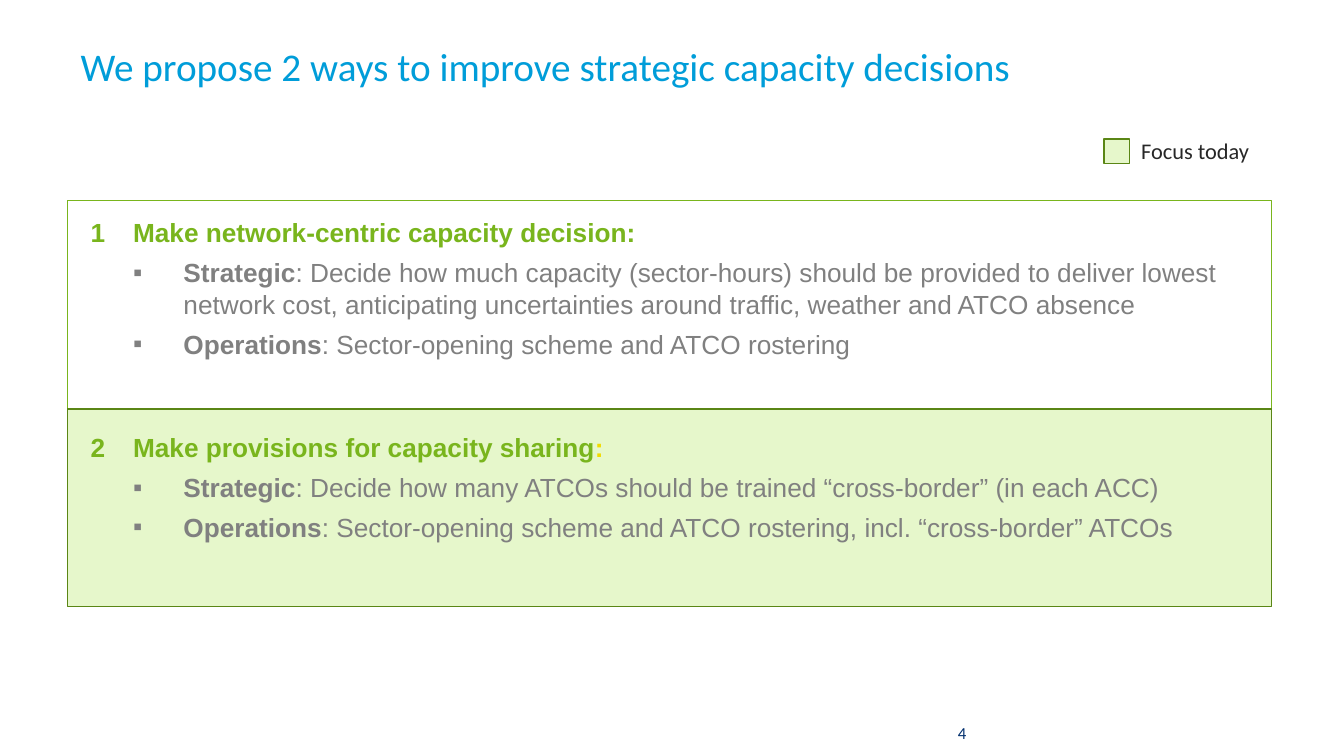
from pptx import Presentation
from pptx import util as u
from pptx.dml.color import RGBColor
from pptx.enum import shapes, text
from pptx.oxml.ns import qn
from lxml import etree

COLORS = {"white": "FFFFFF", "green": "79B51D", "dark_green": "5A8615",
          "pale_green": "E6F7CB", "grey": "808080", "yellow": "F2DB00",
          "blue": "009DD9", "navy": "002F6E", "ink": "272727"}
HEAD = {"name": "Arial", "size": u.Pt(18.7), "bold": True, "color": "green"}
COLON = {**HEAD, "color": "yellow"}
LABEL = {**HEAD, "color": "grey"}
BODY = {**LABEL, "bold": False}
TITLE = {"name": "Calibri", "size": u.Pt(28), "color": "blue"}
LEGEND = {"name": "Calibri", "size": u.Pt(16), "color": "ink"}
PAGE = {"name": "Calibri", "size": u.Pt(12), "color": "navy"}


class Deck:
    """Holds the slide; every box is (left, top, width, height) in % of the slide."""

    def __init__(self, width, height):
        self.prs = Presentation()
        self.prs.slide_width, self.prs.slide_height = u.Inches(width), u.Inches(height)
        self.s = self.prs.slides.add_slide(self.prs.slide_layouts.get_by_name("Two Content"))

    def box(self, left, top, width, height):
        w, h = self.prs.slide_width, self.prs.slide_height
        return [int(share * side / 100) for share, side in
                zip((left, top, width, height), (w, h, w, h))]

    def frame(self, sp, margins=(0, 0), wrap=True, anchor=text.MSO_ANCHOR.TOP):
        tf = sp.text_frame
        side, end = (u.Inches(m) for m in margins)
        values = {"margin_left": side, "margin_right": side, "margin_top": end,
                  "margin_bottom": end, "word_wrap": wrap, "vertical_anchor": anchor,
                  "auto_size": text.MSO_AUTO_SIZE.NONE}
        for name, value in values.items():
            setattr(tf, name, value)
        return tf

    def add_runs(self, p, runs, align=text.PP_ALIGN.LEFT):
        p.alignment = align
        for words, fmt in runs:
            r = p.add_run()
            r.text = words
            for name, value in fmt.items():
                if name == "color":
                    r.font.color.rgb = RGBColor.from_string(COLORS[value])
                else:
                    setattr(r.font, name, value)

    def place(self, sp, box):
        sp.left, sp.top, sp.width, sp.height = self.box(*box)
        self.s.shapes.element.append(sp.element)  # bring to the front

    def title(self, box, words):
        sp = self.s.shapes.title
        self.place(sp, box)
        self.add_runs(self.frame(sp, (0.13, 0.07)).paragraphs[0], [(words, TITLE)])

    def rect(self, box, fill, line, weight):
        sp = self.s.shapes.add_shape(shapes.MSO_SHAPE.RECTANGLE, *self.box(*box))
        sp.shadow.inherit = False
        sp.fill.solid()
        sp.fill.fore_color.rgb = RGBColor.from_string(COLORS[fill])
        sp.line.color.rgb = RGBColor.from_string(COLORS[line])
        sp.line.width = u.Pt(weight)

    def number(self, box, words):
        sp = self.s.shapes.add_shape(shapes.MSO_SHAPE.OVAL, *self.box(*box))
        sp.shadow.inherit = False
        sp.fill.background()
        sp.line.fill.background()
        tf = self.frame(sp, wrap=False, anchor=text.MSO_ANCHOR.MIDDLE)
        self.add_runs(tf.paragraphs[0], [(words, HEAD)], text.PP_ALIGN.CENTER)

    def label(self, box, words, fmt, margins=(0, 0), wrap=True):
        sp = self.s.shapes.add_textbox(*self.box(*box))
        self.add_runs(self.frame(sp, margins, wrap).paragraphs[0], [(words, fmt)])

    def body(self, idx, box, heading, items):
        sp = self.s.placeholders[idx]
        self.place(sp, box)
        tf = self.frame(sp)
        rows = [heading] + [[(name, LABEL), (words, BODY)] for name, words in items]
        for i, runs in enumerate(rows):
            p = tf.add_paragraph() if i else tf.paragraphs[0]
            pPr = p._p.get_or_add_pPr()
            indent = u.Inches(0.5) if i else 0
            pPr.set("marL", str(indent))
            pPr.set("indent", str(-indent))
            if i:
                etree.SubElement(pPr, qn("a:buFont"), typeface="Arial")
                etree.SubElement(pPr, qn("a:buChar"), char="▪")
            else:
                etree.SubElement(pPr, qn("a:buNone"))
            p.space_before, p.space_after = u.Pt(3 if i else 0), u.Pt(3)
            self.add_runs(p, runs)


def main():
    deck = Deck(13.33, 7.5)
    deck.title((5.03, 4.67, 78.17, 9.2),
               "We propose 2 ways to improve strategic capacity decisions")

    # Legend
    deck.rect((82.15, 18.4, 1.88, 3.2), "pale_green", "dark_green", 1)
    deck.label((84.17, 17.47, 9.68, 4.93), "Focus today", LEGEND, (0.1, 0.05), False)

    # Two proposals: panel, number and list
    proposals = [
        (26.53, 27.6, ("white", "green", 0.5), 27.73, 28.67, 19.07,
         [("Make network-centric capacity decision:", HEAD)],
         [("Strategic", ": Decide how much capacity (sector-hours) should be provided to "
           "deliver lowest network cost, anticipating uncertainties around traffic, "
           "weather and ATCO absence"),
          ("Operations", ": Sector-opening scheme and ATCO rostering")]),
        (54.13, 26.13, ("pale_green", "dark_green", 1), 56.13, 57.07, 14.8,
         [("Make provisions for capacity sharing", HEAD), (":", COLON)],
         [("Strategic", ": Decide how many ATCOs should be trained “cross-border” "
           "(in each ACC)"),
          ("Operations", ": Sector-opening scheme and ATCO rostering, incl. "
           "“cross-border” ATCOs")]),
    ]
    for n, (top, height, look, num_top, list_top, list_height,
            heading, items) in enumerate(proposals, 1):
        deck.rect((5.03, top, 89.57, height), *look)
        deck.number((5.6, num_top, 3.38, 6), str(n))
        deck.body(n, (9.9, list_top, 83.95, list_height), heading, items)

    # Page number
    deck.label((71.27, 95.6, 23.33, 3.73), "4", PAGE)
    deck.prs.save("out.pptx")


if __name__ == "__main__":
    main()
